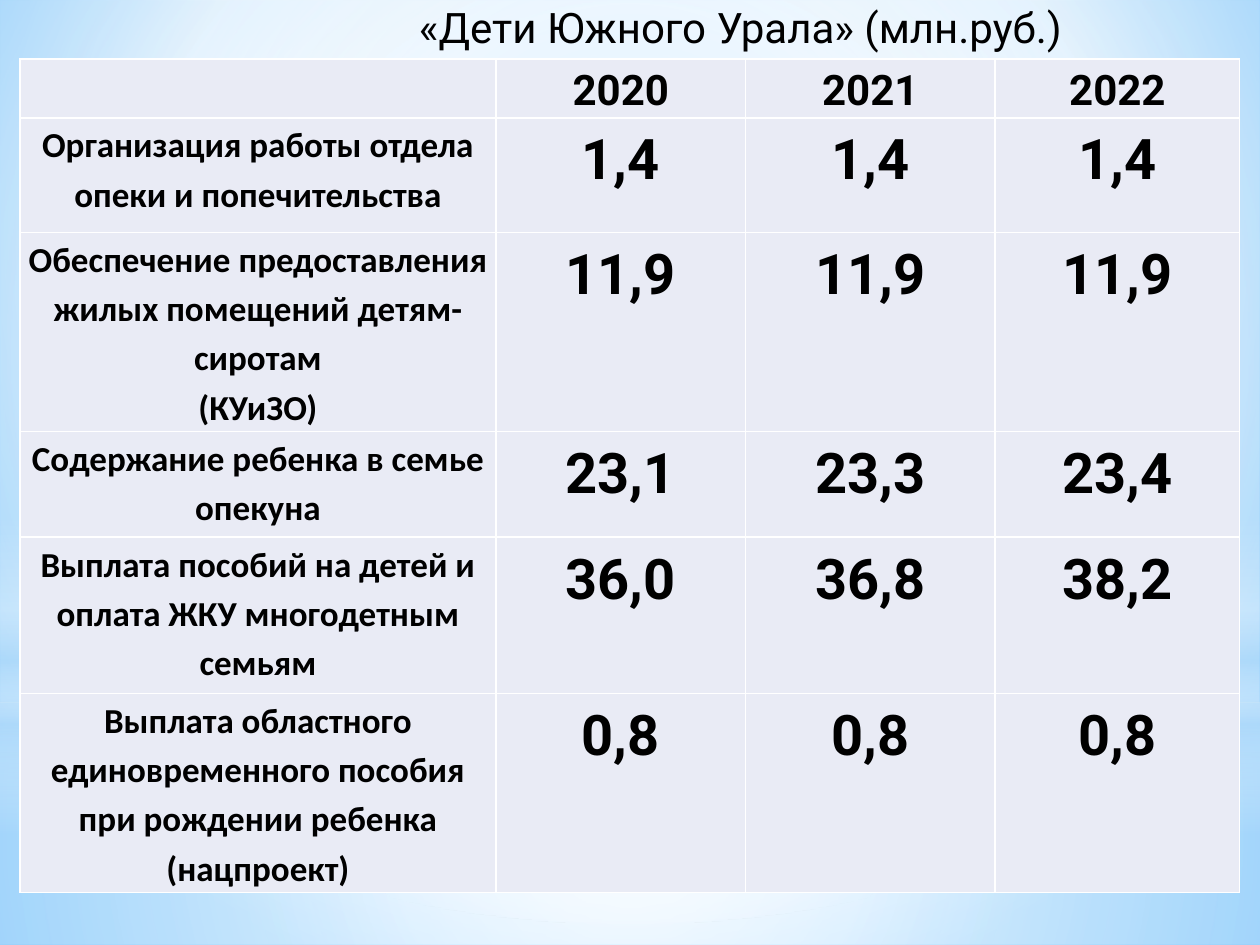
from dataclasses import dataclass

from lxml import etree
from pptx import Presentation, util as u
from pptx.dml.color import RGBColor
from pptx.enum import shapes, text
from pptx.oxml import ns


@dataclass
class Theme:
    ink: str = "000000"
    cell: str = "E9EBF5"
    rule: str = "FFFFFF"
    sky: str = "B4DCFA"
    glow: str = "FFFFFF"
    deep: str = "5BB9FF"
    pale: str = "9ED5FF"
    head: str = "Roboto"
    body: str = "Calibri"
    big: int = 32
    mid: int = 24
    small: int = 20


class Deck:
    """Holds the theme and the current slide, and adds styled elements to it."""

    def __init__(self, theme):
        self.theme = theme
        self.prs = Presentation()
        self.prs.slide_width, self.prs.slide_height = u.Cm(25.4), u.Cm(19.05)
        self.slide = self.prs.slides.add_slide(self.prs.slide_layouts[5])

    def blend(self, fill, root, stops, focus=None):
        fill.solid()
        fill.fore_color.rgb = RGBColor.from_string(self.theme.glow)
        solid = root.xpath(".//a:solidFill")[0]
        grad = etree.Element(ns.qn("a:gradFill"), rotWithShape="1")
        items = etree.SubElement(grad, ns.qn("a:gsLst"))
        for pos, tint, alpha in stops:
            stop = etree.SubElement(items, ns.qn("a:gs"), pos=str(pos * 1000))
            tone = etree.SubElement(stop, ns.qn("a:srgbClr"), val=tint)
            etree.SubElement(tone, ns.qn("a:alpha"), val=str(alpha * 1000))
        if focus:
            way = etree.SubElement(grad, ns.qn("a:path"), {"path": "circle"})
            edges = {side: str(part * 1000) for side, part in zip("ltrb", focus)}
            etree.SubElement(way, ns.qn("a:fillToRect"), edges)
        else:
            etree.SubElement(grad, ns.qn("a:lin"), ang="5400000", scaled="0")
        solid.getparent().replace(solid, grad)

    def back(self, stops, focus):
        self.blend(self.slide.background.fill, self.slide.element, stops, focus)

    def haze(self, kind, top, high, stops, focus=None):
        shape = self.slide.shapes.add_shape(
            kind, 0, u.Cm(top), self.prs.slide_width, u.Cm(high))
        shape.shadow.inherit = False
        shape.line.fill.background()
        self.blend(shape.fill, shape.element.spPr, stops, focus)

    def style(self, para, face, size, bold=False):
        para.alignment = text.PP_ALIGN.CENTER
        font = para.font
        font.name, font.size, font.bold = face, u.Pt(size), bold
        font.color.rgb = RGBColor.from_string(self.theme.ink)

    def title(self, words, left, top, wide, high):
        title = self.slide.shapes.title
        title.left, title.top = u.Cm(left), u.Cm(top)
        title.width, title.height = u.Cm(wide), u.Cm(high)
        frame = title.text_frame
        frame.text = words
        frame.word_wrap = False
        frame.auto_size = text.MSO_AUTO_SIZE.SHAPE_TO_FIT_TEXT
        self.style(frame.paragraphs[0], self.theme.head, self.theme.mid)
        self.slide.shapes.element.append(title.element)

    def cell(self, cell, words, face, size):
        cell.text = words
        cell.margin_left = cell.margin_right = u.Cm(0.08)
        cell.margin_top = cell.margin_bottom = 0
        for para in cell.text_frame.paragraphs:
            self.style(para, face, size, True)
            para.line_spacing = 1.15
        cell.fill.solid()
        cell.fill.fore_color.rgb = RGBColor.from_string(self.theme.cell)
        props = cell.fill._xPr
        for spot, side in enumerate("LRTB"):
            line = etree.Element(ns.qn(f"a:ln{side}"), w=str(u.Pt(1)))
            paint = etree.SubElement(line, ns.qn("a:solidFill"))
            etree.SubElement(paint, ns.qn("a:srgbClr"), val=self.theme.rule)
            props.insert(spot, line)

    def table(self, left, top, cols, rows, data):
        look = self.theme
        table = self.slide.shapes.add_table(
            len(rows), len(cols), u.Cm(left), u.Cm(top),
            u.Cm(sum(cols)), u.Cm(sum(rows))).table
        table.first_row = table.horz_banding = False
        for col, wide in zip(table.columns, cols):
            col.width = u.Cm(wide)
        for row, high in zip(table.rows, rows):
            row.height = u.Cm(high)
        for r, line in enumerate(data):
            for c, words in enumerate(line):
                face = look.head if c else look.body
                size = look.small if c == 0 else look.big if r else look.mid
                self.cell(table.cell(r, c), words, face, size)

    def save(self):
        self.prs.save("out.pptx")


DATA = [
    ("", "2020", "2021", "2022"),
    ("Организация работы отдела опеки и попечительства", "1,4", "1,4", "1,4"),
    ("Обеспечение предоставления жилых помещений детям-сиротам\n(КУиЗО)",
     "11,9", "11,9", "11,9"),
    ("Содержание ребенка в семье опекуна", "23,1", "23,3", "23,4"),
    ("Выплата пособий на детей и оплата ЖКУ многодетным семьям",
     "36,0", "36,8", "38,2"),
    ("Выплата областного единовременного пособия при рождении ребенка "
     "(нацпроект)", "0,8", "0,8", "0,8"),
]


def main():
    look = Theme()
    deck = Deck(look)
    glow, sky = look.glow, look.sky
    rect, oval = shapes.MSO_SHAPE.RECTANGLE, shapes.MSO_SHAPE.OVAL
    mid = (50, 50, 50, 50)
    deck.back([(0, look.pale, 100), (60, glow, 100), (100, look.deep, 100)],
              (20, 10, 20, 60))
    deck.haze(rect, 14.17, 4.88, [(0, glow, 91), (37, glow, 76), (100, sky, 79)], mid)
    deck.haze(rect, 0, 14.17, [(0, glow, 89), (48, glow, 62), (100, sky, 79)], mid)
    deck.haze(rect, 10.46, 6.35, [(0, glow, 0), (29, glow, 30), (45, sky, 40),
                                  (55, glow, 26), (65, sky, 60), (100, glow, 0)])
    deck.haze(oval, 4.45, 14.17, [(0, glow, 100), (56, glow, 0)], mid)
    deck.table(0.4, 1.19, (9.6, 5.03, 5.03, 4.93),
               (1.19, 2.31, 4.01, 2.13, 3.15, 4.01), DATA)
    deck.title("«Дети Южного Урала» (млн.руб.)", 8.03, -0.1, 13.79, 1.27)
    deck.save()


if __name__ == "__main__":
    main()
